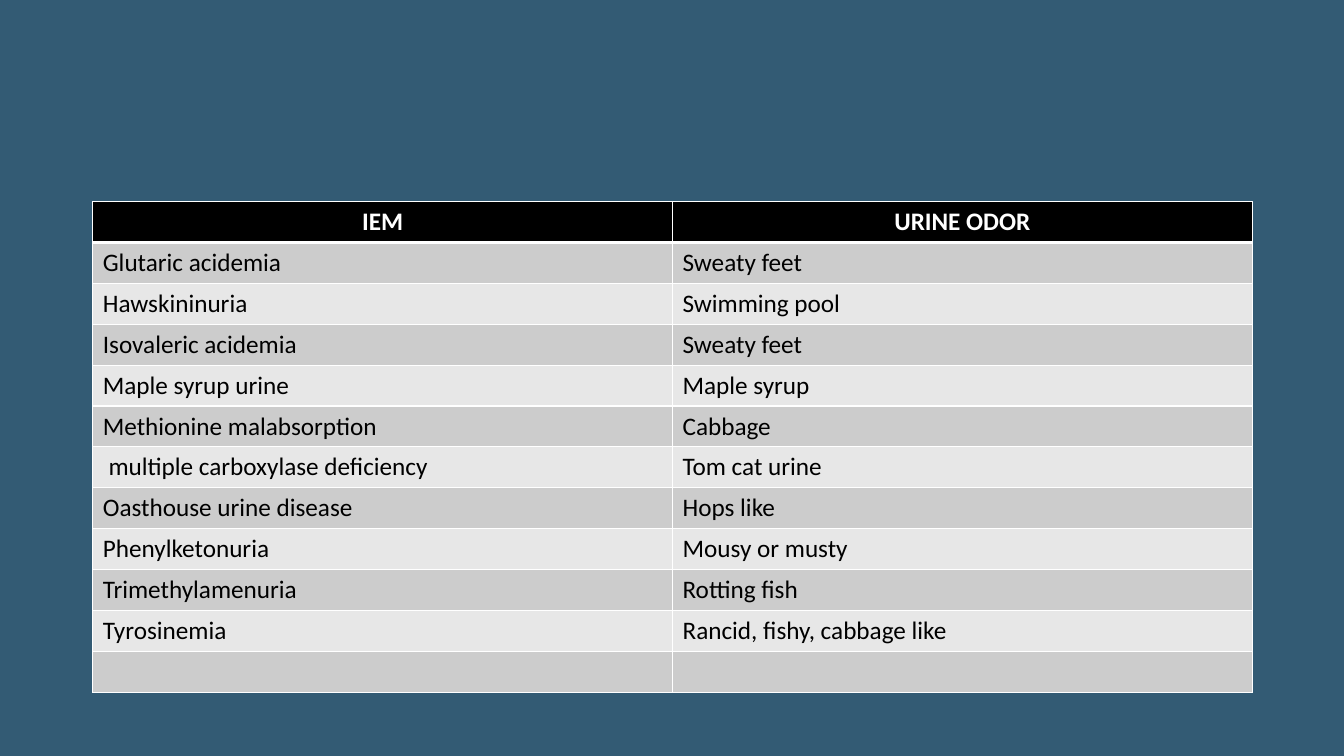
from dataclasses import dataclass

from lxml.etree import SubElement
from pptx import Presentation
from pptx.dml.color import RGBColor
from pptx.enum.text import MSO_ANCHOR, PP_ALIGN
from pptx.oxml.ns import qn
from pptx.util import Inches, Pt


@dataclass(frozen=True)
class Theme:
    background: str = "335B74"
    header_fill: str = "000000"
    band_fills: tuple = ("CCCCCC", "E7E7E7")
    header_text: str = "FFFFFF"
    body_text: str = "000000"
    border: str = "FFFFFF"
    thin_border: float = 1
    header_border: float = 3
    font: str = "Calibri"
    text_size: float = 18


THEME = Theme()
BLANK_LAYOUT = 6
HEADINGS = ("IEM", "URINE ODOR")
ODORS = (
    ("Glutaric acidemia", "Sweaty feet"),
    ("Hawskininuria", "Swimming pool"),
    ("Isovaleric acidemia", "Sweaty feet"),
    ("Maple syrup urine", "Maple syrup"),
    ("Methionine malabsorption", "Cabbage"),
    (" multiple carboxylase deficiency", "Tom cat urine"),
    ("Oasthouse urine disease", "Hops like"),
    ("Phenylketonuria", "Mousy or musty"),
    ("Trimethylamenuria", "Rotting fish"),
    ("Tyrosinemia", "Rancid, fishy, cabbage like"),
    ("", ""),
)


def set_borders(cell, top, bottom):
    properties = cell._tc.get_or_add_tcPr()
    widths = {"L": THEME.thin_border, "R": THEME.thin_border, "T": top, "B": bottom}
    for side, width in widths.items():
        line = SubElement(properties, qn(f"a:ln{side}"), w=str(Pt(width)))
        fill = SubElement(line, qn("a:solidFill"))
        SubElement(fill, qn("a:srgbClr"), val=THEME.border)


def fill_cell(cell, text, row_index):
    is_header = row_index == 0
    set_borders(
        cell,
        top=THEME.header_border if row_index == 1 else THEME.thin_border,
        bottom=THEME.header_border if is_header else THEME.thin_border,
    )
    band = THEME.band_fills[(row_index - 1) % len(THEME.band_fills)]
    cell.fill.solid()
    cell.fill.fore_color.rgb = RGBColor.from_string(
        THEME.header_fill if is_header else band
    )
    cell.vertical_anchor = MSO_ANCHOR.TOP
    paragraph = cell.text_frame.paragraphs[0]
    paragraph.alignment = PP_ALIGN.CENTER if is_header else PP_ALIGN.LEFT
    paragraph.font.size = Pt(THEME.text_size)
    if text:
        run = paragraph.add_run()
        run.text = text
        run.font.name = THEME.font
        run.font.size = Pt(THEME.text_size)
        run.font.bold = is_header
        run.font.color.rgb = RGBColor.from_string(
            THEME.header_text if is_header else THEME.body_text
        )


def add_odor_table(slide, left, top, width, height):
    rows = (HEADINGS, *ODORS)
    shape = slide.shapes.add_table(
        len(rows), len(HEADINGS), left, top, width, height
    )
    for row_index, texts in enumerate(rows):
        for column_index, text in enumerate(texts):
            fill_cell(shape.table.cell(row_index, column_index), text, row_index)


def main():
    presentation = Presentation()
    presentation.slide_width = Inches(13.33)
    presentation.slide_height = Inches(7.5)
    slide = presentation.slides.add_slide(presentation.slide_layouts[BLANK_LAYOUT])
    slide.background.fill.solid()
    slide.background.fill.fore_color.rgb = RGBColor.from_string(THEME.background)
    add_odor_table(slide, Inches(0.92), Inches(2), Inches(11.5), Inches(4.87))
    presentation.save("out.pptx")


if __name__ == "__main__":
    main()
